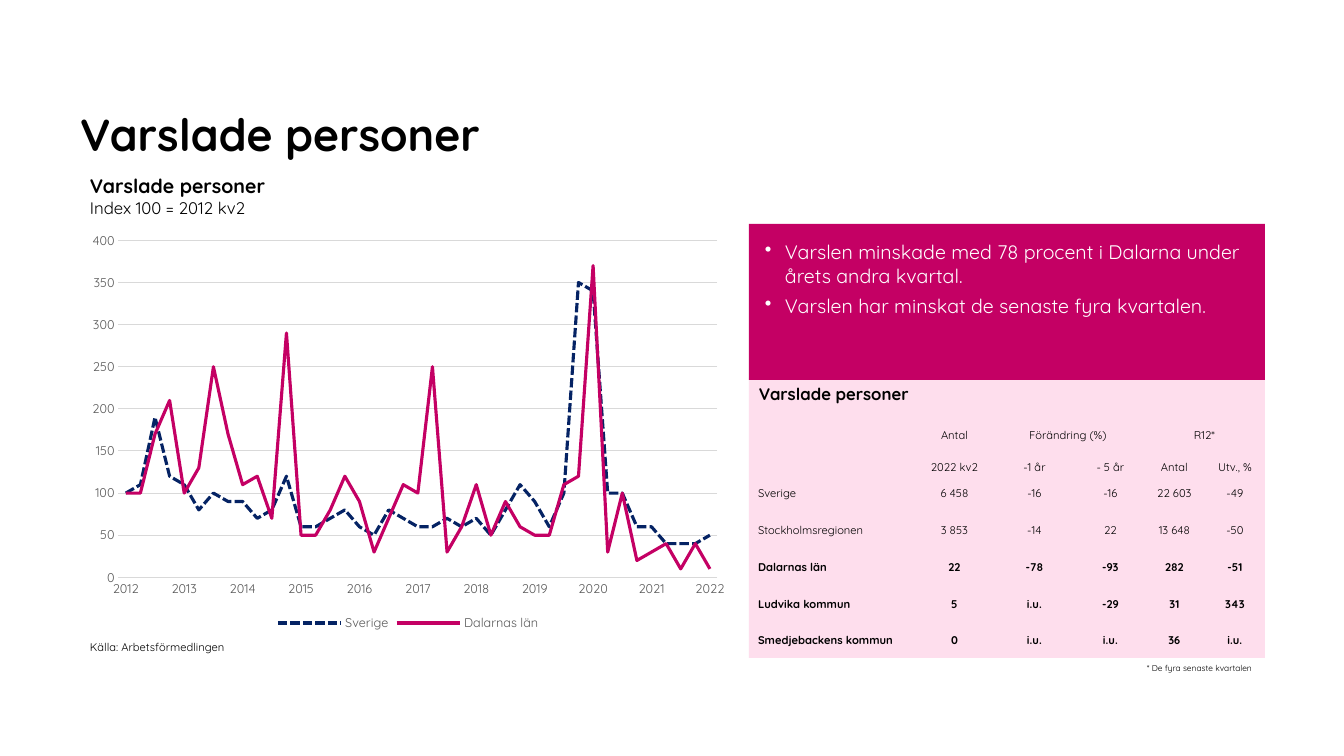
import dataclasses

import lxml.etree
import pptx
import pptx.chart.data
import pptx.dml.color
import pptx.enum.chart
import pptx.enum.dml
import pptx.enum.shapes
import pptx.enum.text
import pptx.oxml
import pptx.oxml.ns
import pptx.util

PX = 914400 / 100.8
ANCHOR = pptx.enum.text.MSO_ANCHOR
ALIGN = pptx.enum.text.PP_ALIGN
DASH = pptx.enum.dml.MSO_LINE_DASH_STYLE


@dataclasses.dataclass(frozen=True)
class Theme:
    font: str = "Quicksand"
    black: str = "000000"
    white: str = "FFFFFF"
    gray: str = "595959"
    grid: str = "D9D9D9"
    navy: str = "052364"
    magenta: str = "C40064"
    pink: str = "FEDEED"
    title: int = 32
    body: int = 14
    heading: int = 12
    axis: int = 9
    small: int = 8
    note: int = 6
    no_table_style: str = "{2D5ABB26-0587-4C30-8999-92F81FD0307C}"


def px(length):
    return pptx.util.Emu(round(length * PX))


def rgb(color):
    return pptx.dml.color.RGBColor.from_string(color)


class SlideBuilder:
    def __init__(self, slide, theme):
        self.slide = slide
        self.theme = theme

    def style(self, font, size, color, bold=False):
        font.name = self.theme.font
        font.size = pptx.util.Pt(size)
        font.bold = bold
        font.color.rgb = rgb(color)

    def margins(self, target, size):
        target.margin_left = target.margin_right = px(size)
        target.margin_top = target.margin_bottom = px(size)

    def text(self, box, lines, fit=True):
        frame = self.slide.shapes.add_textbox(*map(px, box)).text_frame
        frame.word_wrap = not fit
        if fit:
            frame.auto_size = pptx.enum.text.MSO_AUTO_SIZE.SHAPE_TO_FIT_TEXT
        for index, (content, size, bold) in enumerate(lines):
            paragraph = frame.add_paragraph() if index else frame.paragraphs[0]
            paragraph.text = content
            self.style(paragraph.font, size, self.theme.black, bold)
        return frame

    def panel(self, box, color):
        rectangle = pptx.enum.shapes.MSO_SHAPE.RECTANGLE
        shape = self.slide.shapes.add_shape(rectangle, *map(px, box))
        shape.shadow.inherit = False
        shape.fill.solid()
        shape.fill.fore_color.rgb = rgb(color)
        shape.line.fill.background()
        return shape

    def bullets(self, box, color, lines):
        frame = self.panel(box, color).text_frame
        frame.word_wrap = True
        frame.vertical_anchor = ANCHOR.TOP
        self.margins(frame, 16)
        for index, content in enumerate(lines):
            paragraph = frame.add_paragraph() if index else frame.paragraphs[0]
            paragraph.text = content
            paragraph.alignment = ALIGN.LEFT
            properties = paragraph._p.get_or_add_pPr()
            properties.set("marL", str(px(20)))
            properties.set("indent", str(px(-20)))
            bullet = lxml.etree.SubElement(properties, pptx.oxml.ns.qn("a:buChar"))
            bullet.set("char", "•")
            if index:
                paragraph.space_before = pptx.util.Pt(5)
            self.style(paragraph.font, self.theme.body, self.theme.white)

    def table(self, box, widths, heights, rows, merges, header_rows, first_bold):
        table = self.slide.shapes.add_table(len(rows), len(widths), *map(px, box)).table
        table.first_row = table.horz_banding = False
        style_id = table._tbl.tblPr.find(pptx.oxml.ns.qn("a:tableStyleId"))
        style_id.text = self.theme.no_table_style
        for column, width in zip(table.columns, widths):
            column.width = px(width)
        for row, height in zip(table.rows, heights):
            row.height = px(height)
        for row_index, row in enumerate(rows):
            for column_index, content in enumerate(row):
                cell = table.cell(row_index, column_index)
                cell.fill.background()
                self.margins(cell, 1)
                header = row_index < header_rows
                cell.vertical_anchor = ANCHOR.BOTTOM if header else ANCHOR.MIDDLE
                cell.text = content
                paragraph = cell.text_frame.paragraphs[0]
                if column_index:
                    paragraph.alignment = ALIGN.CENTER
                else:
                    paragraph._p.get_or_add_pPr().set("marL", str(px(8)))
                self.style(paragraph.font, self.theme.small, self.theme.black,
                           row_index >= first_bold)
        for row, first, last in merges:
            table.cell(row, first).merge(table.cell(row, last))

    def line_chart(self, box, categories, series_list, plot_layout):
        data = pptx.chart.data.CategoryChartData(number_format="#,##0")
        data.categories = categories
        for name, color, dash, values in series_list:
            data.add_series(name, values)
        chart = self.slide.shapes.add_chart(
            pptx.enum.chart.XL_CHART_TYPE.LINE, *map(px, box), data).chart
        self.style(chart.font, self.theme.axis, self.theme.gray)
        chart.has_title = False
        chart.has_legend = True
        chart.legend.position = pptx.enum.chart.XL_LEGEND_POSITION.BOTTOM
        chart.legend.include_in_layout = False
        self.style(chart.legend.font, self.theme.axis, self.theme.gray)
        chart.plots[0].vary_by_categories = False
        for series, (name, color, dash, values) in zip(chart.plots[0].series, series_list):
            series.smooth = False
            series.marker.style = pptx.enum.chart.XL_MARKER_STYLE.NONE
            series.format.line.color.rgb = rgb(color)
            series.format.line.width = pptx.util.Pt(2.25)
            series.format.line.dash_style = dash
        for axis in (chart.category_axis, chart.value_axis):
            axis.major_tick_mark = axis.minor_tick_mark = pptx.enum.chart.XL_TICK_MARK.NONE
            self.style(axis.tick_labels.font, self.theme.axis, self.theme.gray)
        values_axis = chart.value_axis
        values_axis.minimum_scale, values_axis.maximum_scale = 0, 400
        values_axis.major_unit = 50
        values_axis.format.line.fill.background()
        values_axis.has_major_gridlines = True
        for line in (values_axis.major_gridlines.format.line, chart.category_axis.format.line):
            line.color.rgb = rgb(self.theme.grid)
            line.width = pptx.util.Pt(0.75)
        plot_area = chart._chartSpace.chart.plotArea
        for old in plot_area.findall(pptx.oxml.ns.qn("c:layout")):
            plot_area.remove(old)
        x, y, width, height = plot_layout
        plot_area.insert(0, pptx.oxml.parse_xml(
            f'<c:layout {pptx.oxml.ns.nsdecls("c")}><c:manualLayout>'
            '<c:layoutTarget val="inner"/><c:xMode val="edge"/><c:yMode val="edge"/>'
            f'<c:x val="{x}"/><c:y val="{y}"/><c:w val="{width}"/><c:h val="{height}"/>'
            '</c:manualLayout></c:layout>'))


def main():
    theme = Theme()
    presentation = pptx.Presentation()
    presentation.slide_width, presentation.slide_height = px(1344), px(756)
    slide = presentation.slides.add_slide(presentation.slide_layouts[6])
    builder = SlideBuilder(slide, theme)

    title = builder.text((80, 37, 929, 123), [("Varslade personer", theme.title, True)], fit=False)
    builder.margins(title, 0)
    title.vertical_anchor = ANCHOR.BOTTOM
    builder.text((80, 635, 165, 24), [("Källa: Arbetsförmedlingen", theme.small, False)])
    builder.panel((749, 378, 516, 280), theme.pink)
    builder.bullets((749, 224, 516, 156), theme.magenta, [
        "Varslen minskade med 78 procent i Dalarna under årets andra kvartal.",
        "Varslen har minskat de senaste fyra kvartalen."])
    builder.text((749, 379, 170, 30), [("Varslade personer", theme.heading, True)])
    builder.text((1137, 658, 130, 20), [("* De fyra senaste kvartalen", theme.note, False)])
    builder.text((80, 169, 196, 54), [("Varslade personer", theme.body, True),
                                      ("Index 100 = 2012 kv2", theme.heading, False)])
    builder.table((749, 413, 516, 245), [168, 75, 85, 67, 61, 60], [30, 32, 37, 37, 37, 36, 36], [
        ["", "Antal", "Förändring (%)", "", "R12*", ""],
        ["", "2022 kv2", "-1 år", "- 5 år", "Antal", "Utv., %"],
        ["Sverige", "6 458", "-16", "-16", "22 603", "-49"],
        ["Stockholmsregionen", "3 853", "-14", "22", "13 648", "-50"],
        ["Dalarnas län", "22", "-78", "-93", "282", "-51"],
        ["Ludvika kommun", "5", "i.u.", "-29", "31", "343"],
        ["Smedjebackens kommun", "0", "i.u.", "i.u.", "36", "i.u."],
    ], merges=[(0, 2, 3), (0, 4, 5)], header_rows=2, first_bold=4)
    quarters = [str(2012 + index // 4) if index % 4 == 0 else "" for index in range(41)]
    builder.line_chart((79, 224, 658, 411), quarters, [
        ("Sverige", theme.navy, DASH.SQUARE_DOT,
         [100, 110, 190, 120, 110, 80, 100, 90, 90, 70, 80, 120, 60, 60, 70, 80, 60, 50, 80, 70, 60,
          60, 70, 60, 70, 50, 80, 110, 90, 60, 100, 350, 340, 100, 100, 60, 60, 40, 40, 40, 50]),
        ("Dalarnas län", theme.magenta, DASH.SOLID,
         [100, 100, 170, 210, 100, 130, 250, 170, 110, 120, 70, 290, 50, 50, 80, 120, 90, 30, 70, 110,
          100, 250, 30, 60, 110, 50, 90, 60, 50, 50, 110, 120, 370, 30, 100, 20, 30, 40, 10, 40, 10]),
    ], plot_layout=(0.06, 0.04, 0.91, 0.82))
    presentation.save("out.pptx")


if __name__ == "__main__":
    main()
